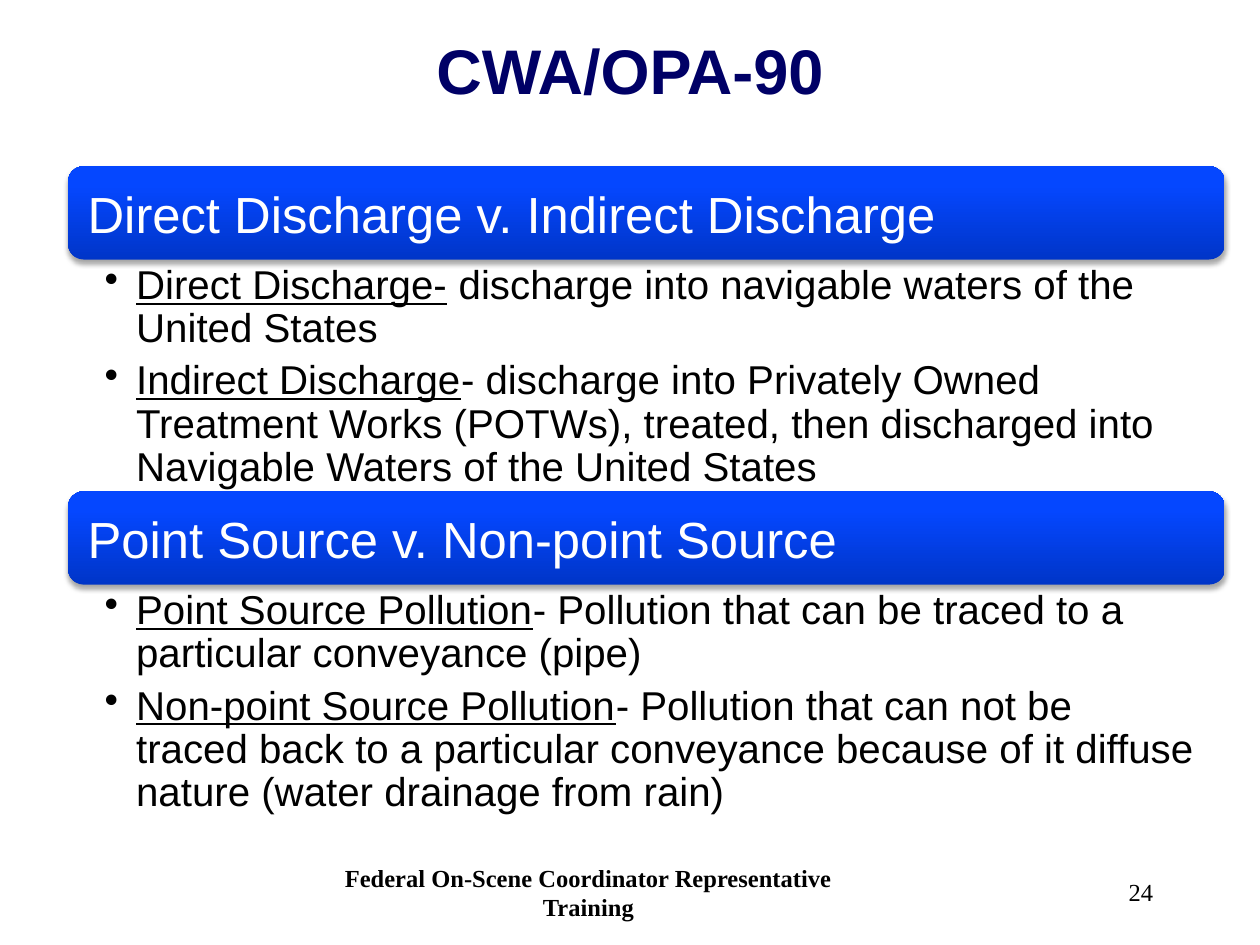
from dataclasses import dataclass

from lxml import etree
from pptx import Presentation
from pptx import util as u
from pptx.dml.color import RGBColor
from pptx.enum import shapes, text
from pptx.oxml import parse_xml
from pptx.oxml.ns import nsdecls, qn

ALIGN, ANCHOR = text.PP_ALIGN, text.MSO_ANCHOR


@dataclass(frozen=True)
class Theme:
    sans: str = "Arial"
    serif: str = "Times New Roman"
    navy: str = "000066"
    white: str = "FFFFFF"
    black: str = "000000"
    stops: tuple = ((0, "0035C8"), (80, "0547FF"), (100, "0648FF"))
    title: int = 36
    head: int = 29
    body: int = 23
    foot: int = 14


SECTIONS = [
    ("Direct Discharge v. Indirect Discharge", [
        ("Direct Discharge-",
         " discharge into navigable waters of the United States"),
        ("Indirect Discharge",
         "- discharge into Privately Owned Treatment Works (POTWs), treated, "
         "then discharged into Navigable Waters of the United States"),
    ]),
    ("Point Source v. Non-point Source", [
        ("Point Source Pollution",
         "- Pollution that can be traced to a particular conveyance (pipe)"),
        ("Non-point Source Pollution",
         "- Pollution that can not be traced back to a particular conveyance "
         "because of it diffuse nature (water drainage from rain)"),
    ]),
]


class Page:
    def __init__(self, slide, theme):
        self.slide = slide
        self.theme = theme

    def frame(self, area, inset, anchor=ANCHOR.MIDDLE, wrap=True):
        """Add a text box and return its text frame."""
        box = self.slide.shapes.add_textbox(*map(u.Inches, area))
        frame = box.text_frame
        frame.word_wrap = wrap
        frame.vertical_anchor = anchor
        (frame.margin_left, frame.margin_top,
         frame.margin_right, frame.margin_bottom) = map(u.Inches, inset)
        return frame

    def style(self, run, size, color, face=None, bold=False, line=False):
        font = run.font
        font.name = face or self.theme.sans
        font.size = u.Pt(size)
        font.color.rgb = RGBColor.from_string(color)
        font.bold = bold
        font.underline = line

    def label(self, words, area, size, color, align=ALIGN.LEFT, face=None,
              bold=False, inset=(0.1, 0.05, 0.1, 0.05), wrap=True):
        frame = self.frame(area, inset, wrap=wrap)
        frame.text = words
        para = frame.paragraphs[0]
        para.alignment = align
        self.style(para.runs[0], size, color, face, bold)

    def bar(self, area):
        """Add a rounded bar with a gradient and a soft shadow below it."""
        bar = self.slide.shapes.add_shape(
            shapes.MSO_SHAPE.ROUNDED_RECTANGLE, *map(u.Inches, area))
        bar.line.fill.background()
        stops = "".join(
            f'<a:gs pos="{pos * 1000}"><a:srgbClr val="{color}"/></a:gs>'
            for pos, color in self.theme.stops)
        props = bar.element.spPr
        props.find(qn("a:prstGeom")).addnext(parse_xml(
            f'<a:gradFill {nsdecls("a")} rotWithShape="1">'
            f'<a:gsLst>{stops}</a:gsLst>'
            '<a:lin ang="16200000" scaled="0"/></a:gradFill>'))
        props.append(parse_xml(
            f'<a:effectLst {nsdecls("a")}><a:outerShdw blurRad="{u.Pt(3.1)}" '
            f'dist="{u.Pt(1.8)}" dir="5400000" rotWithShape="0">'
            f'<a:srgbClr val="{self.theme.black}"><a:alpha val="35000"/>'
            '</a:srgbClr></a:outerShdw></a:effectLst>'))

    def list(self, items, area):
        """Add bullets that each open with an underlined term."""
        theme = self.theme
        frame = self.frame(area, (0.29, 0.04, 0.23, 0.04), ANCHOR.TOP)
        for num, (term, rest) in enumerate(items):
            para = frame.add_paragraph() if num else frame.paragraphs[0]
            para.level = 1
            props = para._p.get_or_add_pPr()
            props.set("marL", str(u.Inches(0.25)))
            props.set("indent", str(u.Inches(-0.25)))
            etree.SubElement(props, qn("a:buChar")).set("char", "•")
            para.line_spacing = 0.9
            para.space_after = u.Pt(5)
            for words, line in ((term, True), (rest, False)):
                run = para.add_run()
                run.text = words
                self.style(run, theme.body, theme.black, line=line)


def main():
    deck = Presentation()
    deck.slide_width, deck.slide_height = u.Inches(10), u.Inches(7.5)
    theme = Theme()
    page = Page(deck.slides.add_slide(deck.slide_layouts[6]), theme)

    page.label("CWA/OPA-90", (0.27, 0.15, 9.46, 0.8), theme.title,
               theme.navy, ALIGN.CENTER, bold=True)

    left, top, width, bar, body, pad = 0.54, 1.32, 9.18, 0.74, 1.84, 0.035
    for num, (head, items) in enumerate(SECTIONS):
        y = top + num * (bar + body)
        page.bar((left, y, width, bar))
        page.label(head, (left + pad, y + pad, width - 2 * pad, bar - 2 * pad),
                   theme.head, theme.white, inset=(0.12,) * 4)
        page.list(items, (left, y + bar, width, body))

    page.label("24", (7.17, 6.83, 2.08, 0.5), theme.foot, theme.black,
               ALIGN.RIGHT, theme.serif, wrap=False)
    page.label("Federal On-Scene Coordinator Representative Training",
               (2.42, 6.83, 4.5, 0.5), theme.foot, theme.black,
               ALIGN.CENTER, theme.serif, bold=True, wrap=False)
    deck.save("out.pptx")


if __name__ == "__main__":
    main()
